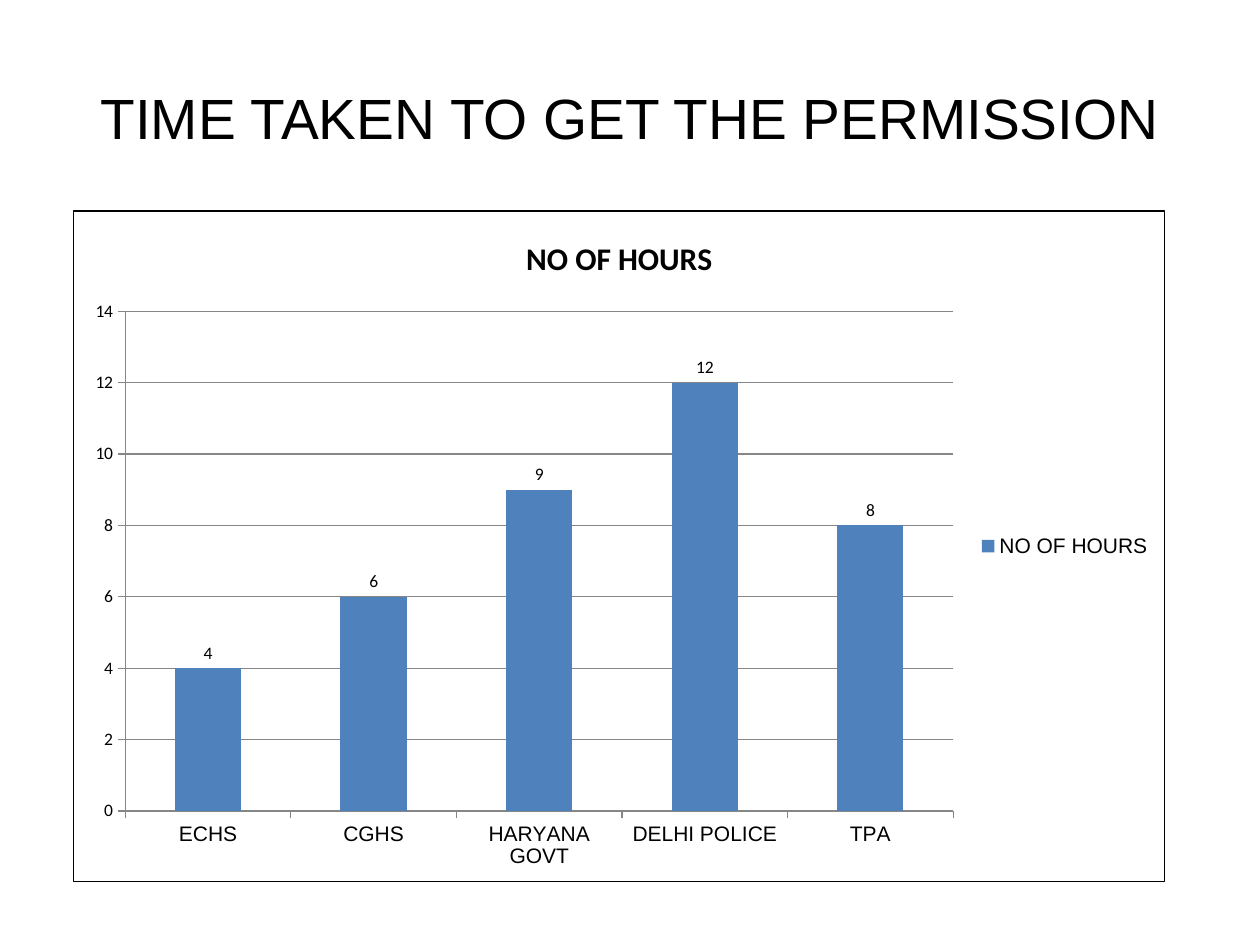
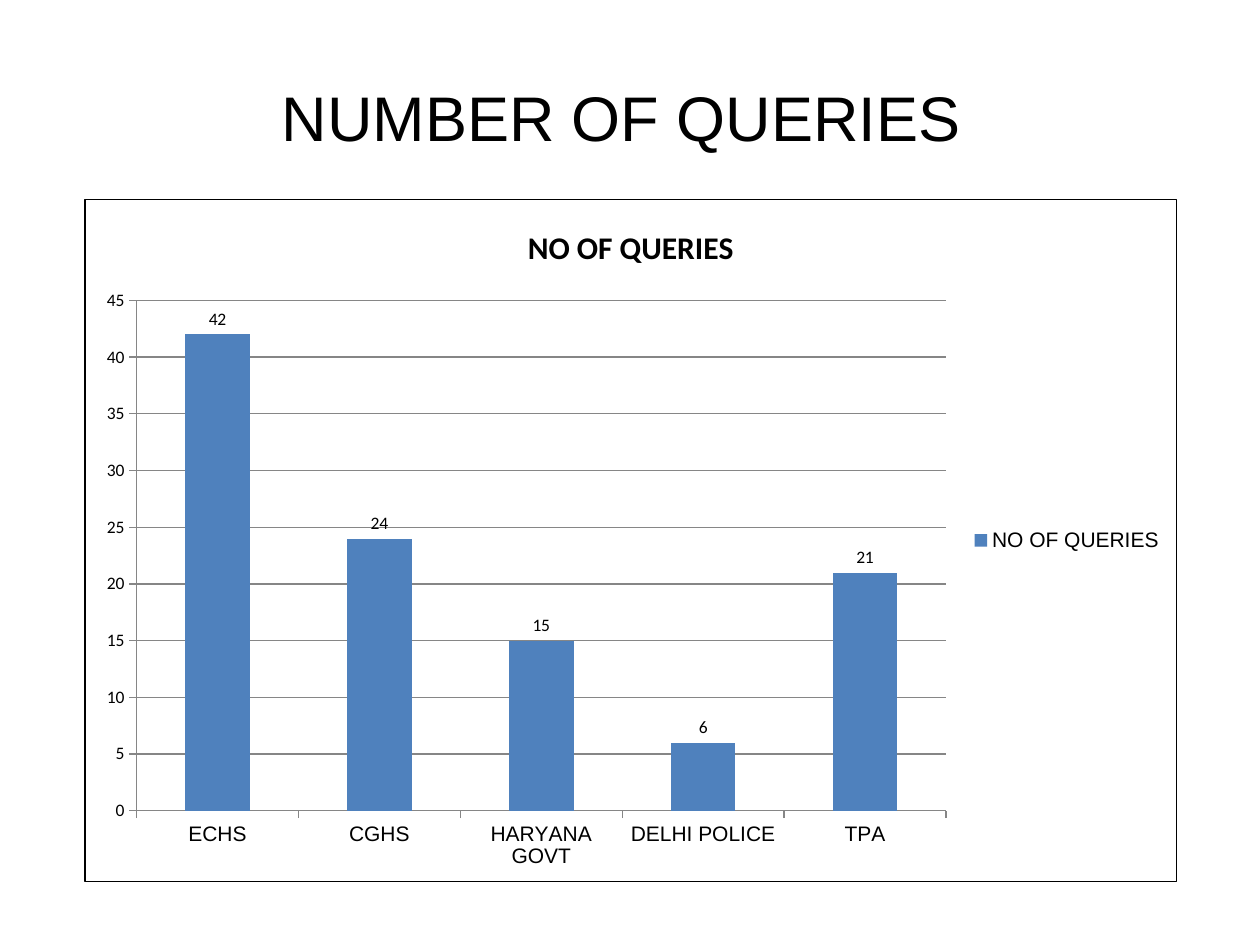
from lxml.etree import fromstring
from pptx import Presentation
from pptx.chart.data import CategoryChartData
from pptx.dml.color import RGBColor
from pptx.enum.chart import XL_CHART_TYPE as CT, XL_LABEL_POSITION as LP
from pptx.enum.chart import XL_LEGEND_POSITION as LEG, XL_TICK_MARK as TM
from pptx.enum.text import MSO_ANCHOR as MA, PP_ALIGN as PA
from pptx.oxml.ns import nsdecls, qn
from pptx.util import Pt

EMU_PER_PX = 9144
COLORS = {"text": "000000", "bar": "4F81BD", "grid": "868686", "back": "FFFFFF"}
HEAD_FONT, CHART_FONT = "Arial", "Calibri"
PAYERS = ["ECHS", "CGHS", "HARYANA GOVT", "DELHI POLICE", "TPA"]
SLIDES = [
    ("TIME TAKEN TO GET THE PERMISSION", 32.4, (58, 167, 867, 533),
     "NO OF HOURS", [4, 6, 9, 12, 8], 14, 2),
    ("NUMBER OF QUERIES ", 36, (67, 158, 867, 542),
     "NO OF QUERIES", [42, 24, 15, 6, 21], 45, 5),
]


def px(n):
    """Turn px into EMU."""
    return n * EMU_PER_PX


def rgb(name):
    """Look up a named colour."""
    return RGBColor.from_string(COLORS[name])


class Deck:
    """Holds the presentation, its style and the current slide."""

    def __init__(self):
        """Start an empty 10 by 7.5 inch presentation."""
        self.prs = Presentation()
        self.prs.slide_width, self.prs.slide_height = px(1000), px(750)
        self.s = None

    def slide(self):
        """Add a blank slide and make it current."""
        self.s = self.prs.slides.add_slide(self.prs.slide_layouts[6])

    def font(self, font, size, name, bold=False):
        """Apply size, face, weight and text colour to a font."""
        font.size, font.name, font.bold = Pt(size), name, bold
        font.color.rgb = rgb("text")

    def title(self, text, size):
        """Add the centred slide title."""
        tf = self.s.shapes.add_textbox(*map(px, (50, 30, 900, 125))).text_frame
        tf.word_wrap, tf.vertical_anchor = True, MA.MIDDLE
        p = tf.paragraphs[0]
        p.alignment = PA.CENTER
        r = p.add_run()
        r.text = text
        self.font(r.font, size, HEAD_FONT)

    def column_chart(self, box, name, values, top, step):
        """Add a framed column chart with title, legend and value labels."""
        data = CategoryChartData()
        data.categories = PAYERS
        data.add_series(name, values)
        chart = self.s.shapes.add_chart(
            CT.COLUMN_CLUSTERED, *map(px, box), data).chart
        self.font(chart.font, 10, CHART_FONT)
        self.frame(chart)

        chart.has_title = True
        r = chart.chart_title.text_frame.paragraphs[0].add_run()
        r.text = name
        self.font(r.font, 18, CHART_FONT, True)
        chart.has_legend = True
        chart.legend.position = LEG.RIGHT
        chart.legend.include_in_layout = False
        self.font(chart.legend.font, 12, HEAD_FONT)

        for axis in (chart.category_axis, chart.value_axis):
            axis.major_tick_mark, axis.minor_tick_mark = TM.OUTSIDE, TM.NONE
            self.line(axis.format.line)
        self.font(chart.category_axis.tick_labels.font, 12, HEAD_FONT)
        axis = chart.value_axis
        axis.minimum_scale, axis.maximum_scale, axis.major_unit = 0, top, step
        axis.has_major_gridlines = True
        self.line(axis.major_gridlines.format.line)

        plot = chart.plots[0]
        plot.vary_by_categories, plot.gap_width = False, 150
        fill = plot.series[0].format.fill
        fill.solid()
        fill.fore_color.rgb = rgb("bar")
        plot.has_data_labels = True
        labels = plot.data_labels
        labels.show_value, labels.position = True, LP.OUTSIDE_END
        self.font(labels.font, 10, CHART_FONT)

    def line(self, line):
        """Style an axis line or gridline."""
        line.color.rgb, line.width = rgb("grid"), Pt(0.75)

    def frame(self, chart):
        """Fill the chart area and draw its border."""
        fill, edge = (f'<a:solidFill><a:srgbClr val="{COLORS[c]}"/></a:solidFill>'
                      for c in ("back", "text"))
        sp_pr = fromstring(f'<c:spPr {nsdecls("c", "a")}>{fill}'
                           f'<a:ln w="{Pt(0.75)}">{edge}</a:ln></c:spPr>')
        chart.element.find(qn("c:chart")).addnext(sp_pr)


def main():
    """Build both slides and save them."""
    deck = Deck()
    for title, size, *chart in SLIDES:
        deck.slide()
        deck.title(title, size)
        deck.column_chart(*chart)
    deck.prs.save("out.pptx")


if __name__ == "__main__":
    main()
